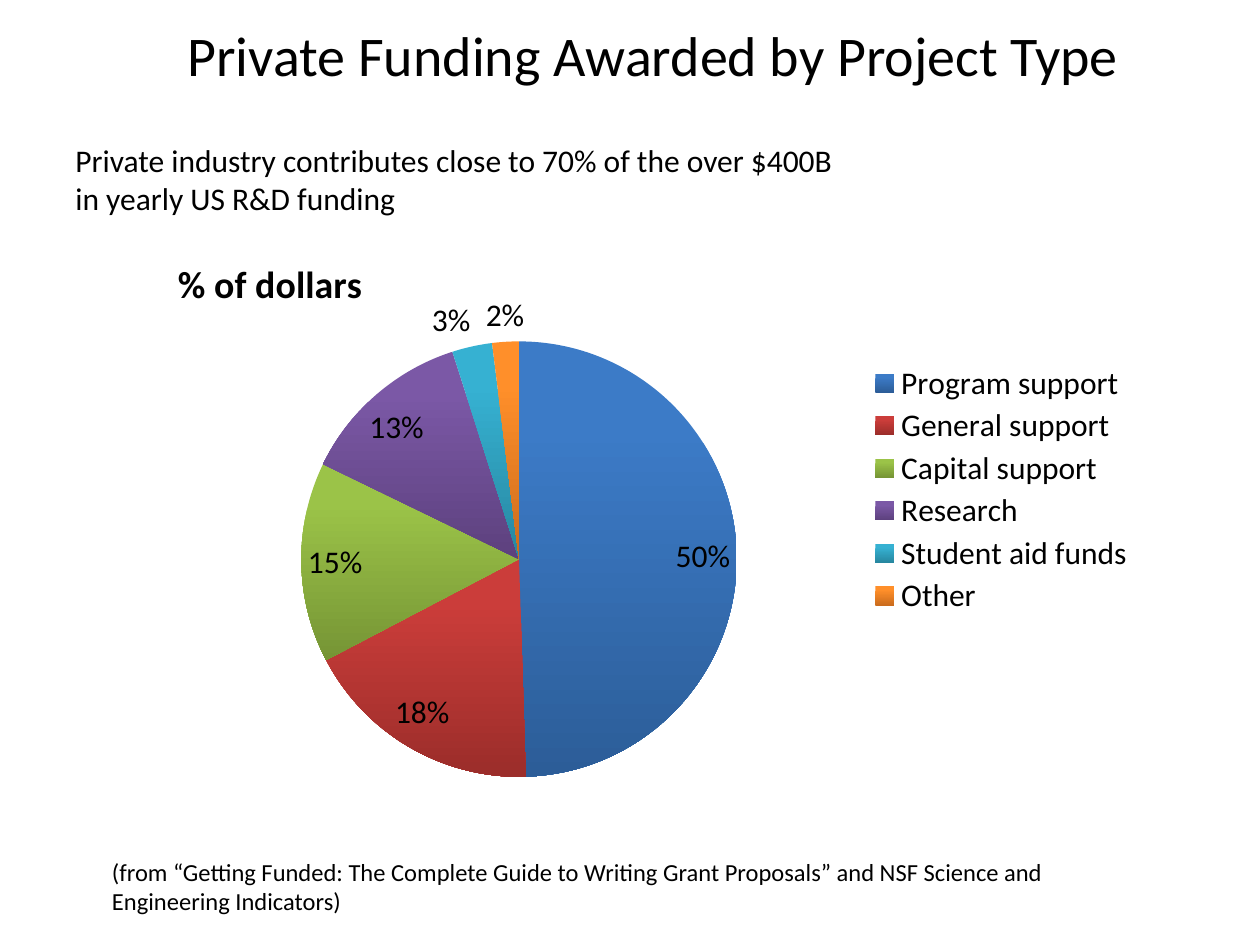
from lxml import etree
from pptx import Presentation
from pptx.chart.data import CategoryChartData
from pptx.dml.color import RGBColor
from pptx.enum.chart import XL_CHART_TYPE, XL_LABEL_POSITION, XL_LEGEND_POSITION
from pptx.enum.text import MSO_ANCHOR, PP_ALIGN
from pptx.oxml.ns import qn
from pptx.util import Inches, Pt

PIE = XL_CHART_TYPE.PIE
BEST_FIT = XL_LABEL_POSITION.BEST_FIT
LEGEND_RIGHT = XL_LEGEND_POSITION.RIGHT
TOP = MSO_ANCHOR.TOP
LEFT, CENTER = PP_ALIGN.LEFT, PP_ALIGN.CENTER

FONT = "Calibri"
COLORS = {
    "text": "000000",
    # Each slice runs from a light top to a dark bottom
    "Program support": ("3C7BC7", "2C5D98"),
    "General support": ("CB3D3A", "9B2D2A"),
    "Capital support": ("9BC348", "769535"),
    "Research": ("7B58A6", "5D417E"),
    "Student aid funds": ("36B1D2", "2787A0"),
    "Other": ("FF8F2A", "CB6C1D"),
}
SHARES = {
    "Program support": 0.5,
    "General support": 0.18,
    "Capital support": 0.15,
    "Research": 0.13,
    "Student aid funds": 0.03,
    "Other": 0.02,
}


def style_font(font, size, bold=False):
    font.name = FONT
    font.size = Pt(size)
    font.bold = bold
    font.color.rgb = RGBColor.from_string(COLORS["text"])


def add_text(slide, box, text, size, align=LEFT, margin_top=0.05):
    shape = slide.shapes.add_textbox(*map(Inches, box))
    text_frame = shape.text_frame
    text_frame.word_wrap = True
    text_frame.vertical_anchor = TOP
    text_frame.margin_top = Inches(margin_top)
    text_frame.text = text
    paragraph = text_frame.paragraphs[0]
    paragraph.alignment = align
    style_font(paragraph.runs[0].font, size)


def set_layout(element, inner=False, **fractions):
    """Place a chart part by fractions of the chart area."""
    layout = element.find(qn("c:layout"))
    if layout is None:
        layout = etree.Element(qn("c:layout"))
        anchor = next((element.find(qn(tag)) for tag in ("c:tx", "c:legendPos")
                       if element.find(qn(tag)) is not None), None)
        if anchor is None:
            element.insert(0, layout)
        else:
            anchor.addnext(layout)
    for child in list(layout):
        layout.remove(child)
    manual = etree.SubElement(layout, qn("c:manualLayout"))
    settings = [("layoutTarget", "inner")] if inner else []
    settings += [("xMode", "edge"), ("yMode", "edge")]
    settings += [(name, str(value)) for name, value in fractions.items()]
    for name, value in settings:
        etree.SubElement(manual, qn("c:" + name)).set("val", value)


def add_funding_pie(slide, box):
    chart_data = CategoryChartData(number_format="0%")
    chart_data.categories = list(SHARES)
    chart_data.add_series("% of dollars", list(SHARES.values()))
    chart = slide.shapes.add_chart(PIE, *map(Inches, box), chart_data).chart
    style_font(chart.font, 18)

    # Title
    chart.has_title = True
    title = chart.chart_title
    title.text_frame.text = "% of dollars"
    style_font(title.text_frame.paragraphs[0].runs[0].font, 21.6, bold=True)
    set_layout(title._element, x=0.02, y=0.1)

    # Legend
    chart.has_legend = True
    chart.legend.position = LEGEND_RIGHT
    chart.legend.include_in_layout = False
    style_font(chart.legend.font, 18)
    set_layout(chart.legend._element, x=0.72, y=0.28, w=0.27, h=0.43)

    # Slices
    plot = chart.plots[0]
    plot.vary_by_categories = True
    set_layout(chart._chartSpace.chart.plotArea, inner=True,
               x=0.15, y=0.25, w=0.44, h=0.72)
    for index, category in enumerate(SHARES):
        fill = plot.series[0].points[index].format.fill
        fill.gradient()
        fill.gradient_angle = 270
        for stop, color, position in zip(fill.gradient_stops, COLORS[category], (0.2, 1)):
            stop.color.rgb = RGBColor.from_string(color)
            stop.position = position

    # Value labels
    plot.has_data_labels = True
    labels = plot.data_labels
    labels.show_value = True
    labels.show_percentage = False
    labels.number_format = "0%"
    labels.number_format_is_linked = False
    labels.position = BEST_FIT
    style_font(labels.font, 18)


def build_slide(presentation):
    slide = presentation.slides.add_slide(presentation.slide_layouts[6])
    add_text(slide, (0.64, 0.07, 9.09, 1.2),
             "Private Funding Awarded by Project Type", 32, CENTER, margin_top=0.09)
    add_funding_pie(slide, (1.2, 1.51, 7.89, 4.8))
    add_text(slide, (0.79, 6.75, 7.78, 0.57),
             "(from “Getting Funded: The Complete Guide to Writing Grant Proposals” "
             "and NSF Science and Engineering Indicators)", 14)
    add_text(slide, (0.5, 1.07, 6.45, 0.71),
             "Private industry contributes close to 70% of the over $400B "
             "in yearly US R&D funding", 18)


def main():
    presentation = Presentation()
    presentation.slide_width = Inches(10)
    presentation.slide_height = Inches(7.5)
    build_slide(presentation)
    presentation.save("out.pptx")


if __name__ == "__main__":
    main()
